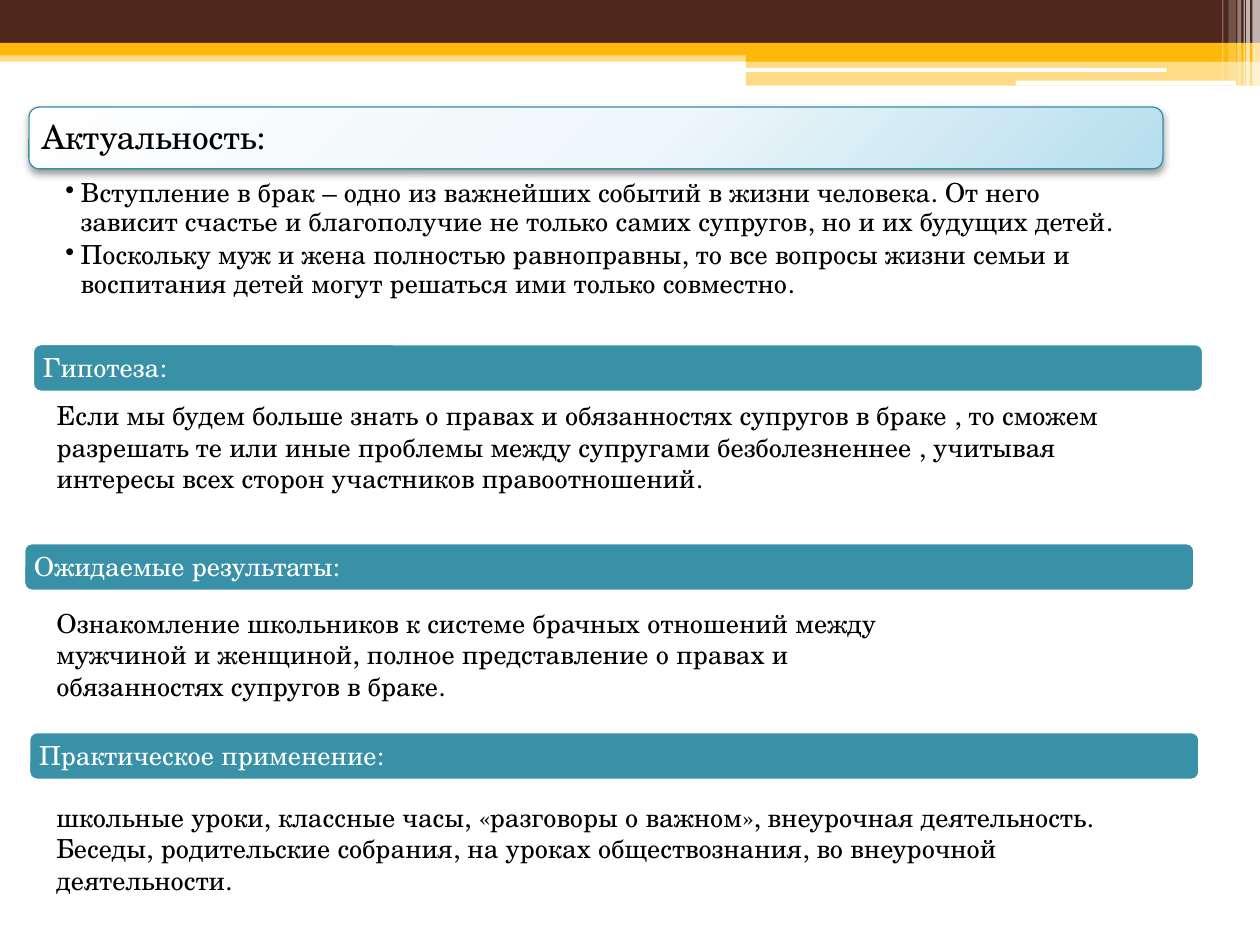
from typing import NamedTuple

from pptx import Presentation
from pptx import util as u
from pptx.dml.color import RGBColor
from pptx.enum import shapes, text
from pptx.oxml import parse_xml
from pptx.oxml.ns import nsdecls, qn

COLORS = {
    "brown": "4F271C",
    "amber": "FEB80A",
    "teal": "3891A7",
    "white": "FFFFFF",
    "black": "000000",
    "ice": "FEFEFF",
    "mist": "EEF7FA",
    "sky": "B6DEEE",
}
FONT = "TeX Gyre Schola"
BODY_SIZE = 15
RECT = shapes.MSO_SHAPE.RECTANGLE
ROUND = shapes.MSO_SHAPE.ROUNDED_RECTANGLE


class Box(NamedTuple):
    left: float
    top: float
    width: float
    height: float


class Band(NamedTuple):
    box: Box
    color: str
    opacity: int = 100
    outline: shapes.MSO_SHAPE = RECT


class Section(NamedTuple):
    heading: str
    left: float
    top: float
    body: str
    body_top: float
    body_width: float


BANDS = [
    Band(Box(0, 0.4, 10, 0.09), "amber", 50),
    Band(Box(0, 0, 10, 0.34), "brown"),
    Band(Box(0, 0.34, 10, 0.1), "amber"),
    Band(Box(5.92, 0.39, 4.08, 0.1), "amber"),
    Band(Box(5.92, 0.48, 4.08, 0.2), "amber", 50),
    Band(Box(5.91, 0.54, 3.35, 0.03), "white", outline=ROUND),
    Band(Box(8.06, 0.64, 1.75, 0.04), "white", outline=ROUND),
    Band(Box(9.94, 0, 0.06, 0.68), "white", 65),
    Band(Box(9.89, 0, 0.03, 0.68), "white", 65),
    Band(Box(9.87, 0, 0.01, 0.68), "white", 60),
    Band(Box(9.82, 0, 0.03, 0.68), "white", 40),
    Band(Box(9.75, 0, 0.06, 0.64), "white", 20),
    Band(Box(9.7, 0, 0.01, 0.64), "white", 30),
]

SECTIONS = [
    Section(
        "Гипотеза:", 0.26, 2.73,
        "Если мы будем больше знать о правах и обязанностях супругов в браке , "
        "то сможем разрешать те или иные проблемы между супругами безболезненнее , "
        "учитывая интересы всех сторон участников правоотношений.",
        3.12, 8.82,
    ),
    Section(
        "Ожидаемые результаты:", 0.19, 4.31,
        "Ознакомление школьников к системе брачных отношений между мужчиной "
        "и женщиной, полное представление о правах и обязанностях супругов в браке.",
        4.77, 7.4,
    ),
    Section(
        "Практическое применение:", 0.23, 5.81,
        "школьные уроки, классные часы, «разговоры о важном», внеурочная "
        "деятельность. Беседы, родительские собрания, на уроках обществознания, "
        "во внеурочной деятельности.",
        6.31, 8.94,
    ),
]

RELEVANCE = [
    "Вступление в брак – одно из важнейших событий в жизни человека. От него "
    "зависит счастье и благополучие не только самих супругов, но и их будущих детей.",
    "Поскольку муж и жена полностью равноправны, то все вопросы жизни семьи и "
    "воспитания детей могут решаться ими только совместно.",
]


def rgb(name: str) -> RGBColor:
    return RGBColor.from_string(COLORS[name])


def inches(box: Box) -> list[u.Inches]:
    return [u.Inches(length) for length in box]


def add_band(slide, band: Band):
    strip = slide.shapes.add_shape(band.outline, *inches(band.box))
    strip.shadow.inherit = False
    strip.fill.solid()
    strip.fill.fore_color.rgb = rgb(band.color)
    strip.line.fill.background()
    if band.opacity < 100:
        tint = strip.element.spPr.find(".//" + qn("a:srgbClr"))
        tint.append(parse_xml(f'<a:alpha {nsdecls("a")} val="{band.opacity * 1000}"/>'))
    return strip


def write(holder, lines: list[str], size: float, color: str, margins: Box,
          spacing: float = 1, anchor=text.MSO_ANCHOR.TOP) -> None:
    frame = holder.text_frame
    frame.text = "\n".join(lines)
    frame.word_wrap = True
    frame.auto_size = text.MSO_AUTO_SIZE.NONE
    frame.vertical_anchor = anchor
    (frame.margin_left, frame.margin_top,
     frame.margin_right, frame.margin_bottom) = inches(margins)
    for paragraph in frame.paragraphs:
        paragraph.alignment = text.PP_ALIGN.LEFT
        paragraph.line_spacing = spacing
        font = paragraph.runs[0].font
        font.name, font.size = FONT, u.Pt(size)
        font.color.rgb = rgb(color)


def add_section(slide, section: Section) -> None:
    bar = add_band(slide, Band(Box(section.left, section.top, 9.29, 0.38), "teal", outline=ROUND))
    bar.line.color.rgb = rgb("white")
    bar.line.width = u.Pt(1.5)
    heading = slide.shapes.add_textbox(
        *inches(Box(section.left + 0.02, section.top + 0.02, 9.25, 0.35)))
    write(heading, [section.heading], BODY_SIZE, "white", Box(*[0.06] * 4),
          0.9, text.MSO_ANCHOR.MIDDLE)
    body = slide.shapes.add_textbox(
        *inches(Box(0.35, section.body_top, section.body_width, 0.86)))
    write(body, [section.body], BODY_SIZE, "black", Box(0.1, 0.05, 0.1, 0.05))
    body.text_frame.auto_size = text.MSO_AUTO_SIZE.SHAPE_TO_FIT_TEXT


def add_title(slide) -> None:
    plate = add_band(slide, Band(Box(0.23, 0.85, 9, 0.49), "sky", outline=ROUND))
    plate.line.color.rgb = rgb("teal")
    plate.line.width = u.Pt(0.75)
    properties = plate.element.spPr
    stops = "".join(
        f'<a:gs pos="{place * 1000}"><a:srgbClr val="{COLORS[name]}"/></a:gs>'
        for place, name in [(0, "ice"), (55, "mist"), (100, "sky")])
    properties.replace(properties.find(qn("a:solidFill")), parse_xml(
        f'<a:gradFill {nsdecls("a")} rotWithShape="1"><a:gsLst>{stops}</a:gsLst>'
        '<a:path path="circle"><a:fillToRect l="-40000" t="-90000" r="140000" b="190000"/>'
        '</a:path></a:gradFill>'))
    properties.find(qn("a:effectLst")).append(parse_xml(
        f'<a:outerShdw {nsdecls("a")} blurRad="{u.Pt(4.1)}" dist="{u.Pt(2)}" dir="5400000" '
        f'rotWithShape="0"><a:srgbClr val="{COLORS["black"]}"><a:alpha val="40000"/>'
        '</a:srgbClr></a:outerShdw>'))
    title = slide.shapes.title
    title.left, title.top, title.width, title.height = inches(Box(0.25, 0.88, 8.95, 0.44))
    write(title, ["Актуальность:"], 19, "black", Box(*[0.08] * 4),
          0.9, text.MSO_ANCHOR.MIDDLE)
    slide.shapes.element.append(title.element)


def add_relevance(slide) -> None:
    reasons = slide.shapes.add_textbox(*inches(Box(0.23, 1.4, 9, 0.97)))
    write(reasons, RELEVANCE, BODY_SIZE, "black", Box(0.29, 0.03, 0.15, 0.03), 0.9)
    for paragraph in reasons.text_frame.paragraphs:
        paragraph.space_after = u.Pt(3)
        properties = paragraph.runs[0].font and paragraph.element.get_or_add_pPr() if hasattr(
            paragraph, "element") else paragraph._p.get_or_add_pPr()
        properties.set("marL", str(u.Inches(0.12)))
        properties.set("indent", str(-u.Inches(0.12)))
        properties.append(parse_xml(f'<a:buChar {nsdecls("a")} char="•"/>'))


def main() -> None:
    deck = Presentation()
    deck.slide_width, deck.slide_height = u.Inches(10), u.Inches(7.5)
    slide = deck.slides.add_slide(deck.slide_layouts[5])
    for band in BANDS:
        add_band(slide, band)
    for section in SECTIONS:
        add_section(slide, section)
    add_title(slide)
    add_relevance(slide)
    deck.save("out.pptx")


if __name__ == "__main__":
    main()
